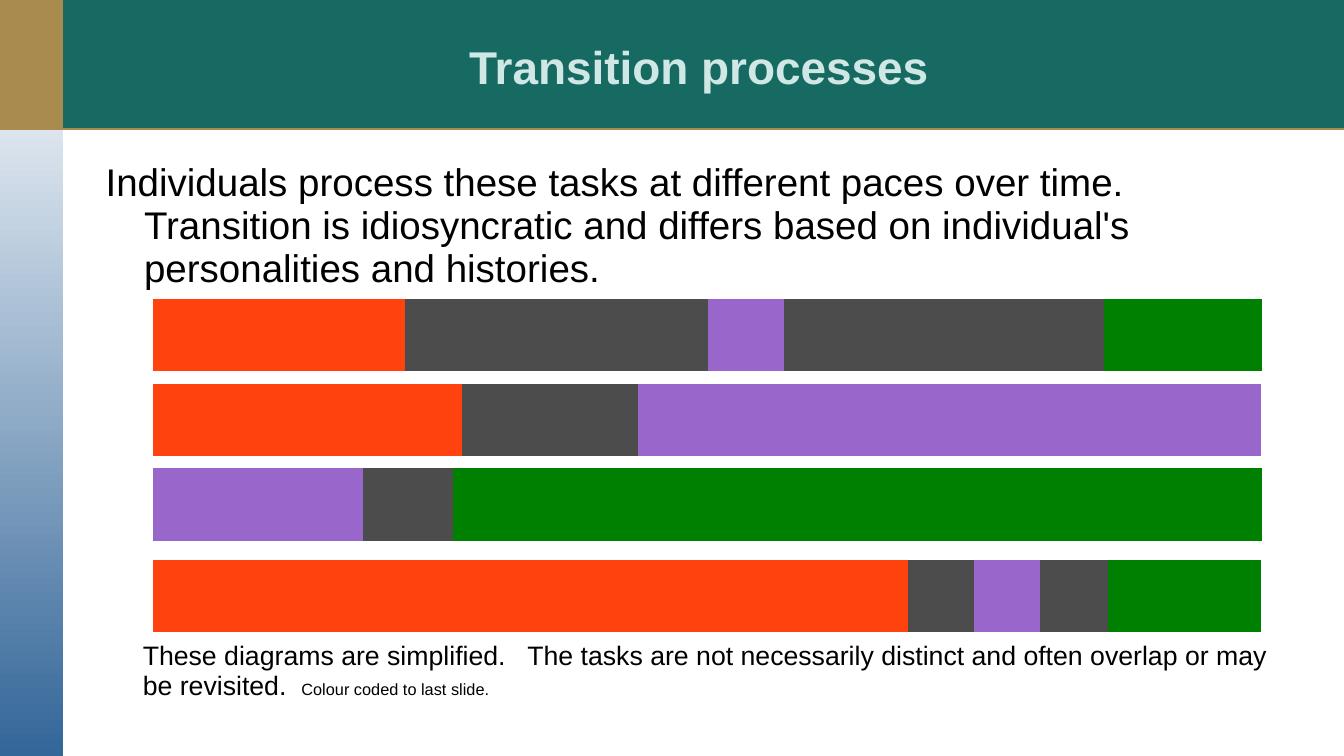
from lxml import etree
from pptx import Presentation
from pptx import util as u
from pptx.dml import color
from pptx.enum import shapes, text
from pptx.oxml import ns

COLOURS = {
    "teal": "166A62", "gold": "A98A4F", "mint": "CFE7E5", "black": "000000",
    "white": "FFFFFF", "blue": "336699", "orange": "FF420E", "grey": "4C4C4C",
    "purple": "9966CC", "green": "008000",
}
SLIDE_WIDTH, SLIDE_HEIGHT = 12.6, 7.09
BAND_HEIGHT, SIDE_WIDTH = 1.21, 0.59
ROW_HEIGHT, LEFT_MARGIN = 0.68, 1.43
PLAIN_TABLE = "{2D5ABB26-0587-4C30-8999-92F81FD0307C}"

PROCESSES = [
    (2.12, [(2.37, "orange"), (2.84, "grey"), (0.71, "purple"), (3, "grey"), (1.48, "green")]),
    (2.92, [(2.9, "orange"), (1.65, "grey"), (3.93, "purple"), (1.43, "purple"), (0.48, "purple")]),
    (3.71, [(0.73, "purple"), (0.6, "purple"), (0.64, "purple"), (0.85, "grey"), (7.58, "green")]),
    (4.57, [(7.08, "orange"), (0.62, "grey"), (0.62, "purple"), (0.64, "grey"), (1.43, "green")]),
]


def rgb(name):
    return color.RGBColor.from_string(COLOURS[name])


def apply(target, values):
    for name, value in values.items():
        setattr(target, name, value)


def inches(*values):
    return [u.Inches(value) for value in values]


def add_block(slide, box, *fills):
    shape = slide.shapes.add_shape(shapes.MSO_SHAPE.RECTANGLE, *inches(*box))
    shape.shadow.inherit = False
    shape.line.fill.background()
    if len(fills) == 1:
        shape.fill.solid()
        shape.fill.fore_color.rgb = rgb(fills[0])
        return
    shape.fill.gradient()
    shape.fill.gradient_angle = 270
    for stop, name in zip(shape.fill.gradient_stops, fills):
        stop.color.rgb = rgb(name)


def add_rule(slide, top, name):
    rule = slide.shapes.add_connector(
        shapes.MSO_CONNECTOR.STRAIGHT, *inches(0, top, SLIDE_WIDTH, top))
    rule.line.color.rgb = rgb(name)
    rule.line.width = u.Pt(2)
    etree.SubElement(rule._element.spPr, ns.qn("a:effectLst"))


def add_text(slide, box, insets, runs, name="black", bold=False,
             anchor=text.MSO_ANCHOR.TOP, **paragraph_format):
    frame = slide.shapes.add_textbox(*inches(*box)).text_frame
    sides = ("margin_left", "margin_top", "margin_right", "margin_bottom")
    apply(frame, dict(zip(sides, inches(*insets)), word_wrap=True, vertical_anchor=anchor))
    paragraph = frame.paragraphs[0]
    apply(paragraph, {"line_spacing": 0.93, **paragraph_format})
    for words, size in runs:
        run = paragraph.add_run()
        run.text = words
        apply(run.font, {"name": "Arial", "size": u.Pt(size), "bold": bold})
        run.font.color.rgb = rgb(name)
    return paragraph


def add_process(slide, top, stages):
    widths = [LEFT_MARGIN] + [width for width, _ in stages]
    table = slide.shapes.add_table(
        2, len(widths), *inches(0, top, sum(widths), 2 * ROW_HEIGHT)).table
    apply(table, {"first_row": False, "horz_banding": False})
    table._tbl.tblPr.find(ns.qn("a:tableStyleId")).text = PLAIN_TABLE
    for column, width in zip(table.columns, widths):
        column.width = u.Inches(width)
    for cell in table.iter_cells():
        cell.fill.background()
    for index, (_, name) in enumerate(stages, 1):
        fill = table.cell(1, index).fill
        fill.solid()
        fill.fore_color.rgb = rgb(name)


def main():
    presentation = Presentation()
    apply(presentation, {"slide_width": u.Inches(SLIDE_WIDTH),
                         "slide_height": u.Inches(SLIDE_HEIGHT)})
    slide = presentation.slides.add_slide(presentation.slide_layouts[6])

    add_block(slide, (SIDE_WIDTH, 0, SLIDE_WIDTH - SIDE_WIDTH, BAND_HEIGHT), "teal")
    add_block(slide, (0, 0, SIDE_WIDTH, SLIDE_HEIGHT), "white", "blue")
    add_rule(slide, BAND_HEIGHT, "gold")
    add_block(slide, (0, 0, SIDE_WIDTH, BAND_HEIGHT), "gold")

    add_text(slide, (0.5, 0, 12.1, 1.26), (0, 0.04, 0, 0),
             [("Transition processes", 31)], name="mint", bold=True,
             anchor=text.MSO_ANCHOR.MIDDLE, alignment=text.PP_ALIGN.CENTER)
    statement = add_text(
        slide, (0.99, 1.49, 10.98, 5.03), (0, 0.03, 0, 0),
        [("Individuals process these tasks at different paces over time.  Transition is "
          "idiosyncratic and differs based on individual's personalities and histories.", 26)],
        space_before=u.Pt(8))
    hanging = u.Inches(0.36)
    for name, value in {"marL": hanging, "indent": -hanging}.items():
        statement._p.get_or_add_pPr().set(name, str(value))

    for top, stages in PROCESSES:
        add_process(slide, top, stages)
    add_text(slide, (1.24, 5.95, 10.91, 0.62), (0.1, 0.07, 0.1, 0.05),
             [("These diagrams are simplified.   The tasks are not necessarily distinct "
               "and often overlap or may be revisited.  ", 18),
              ("Colour coded to last slide.", 11)])

    presentation.save("out.pptx")


if __name__ == "__main__":
    main()
